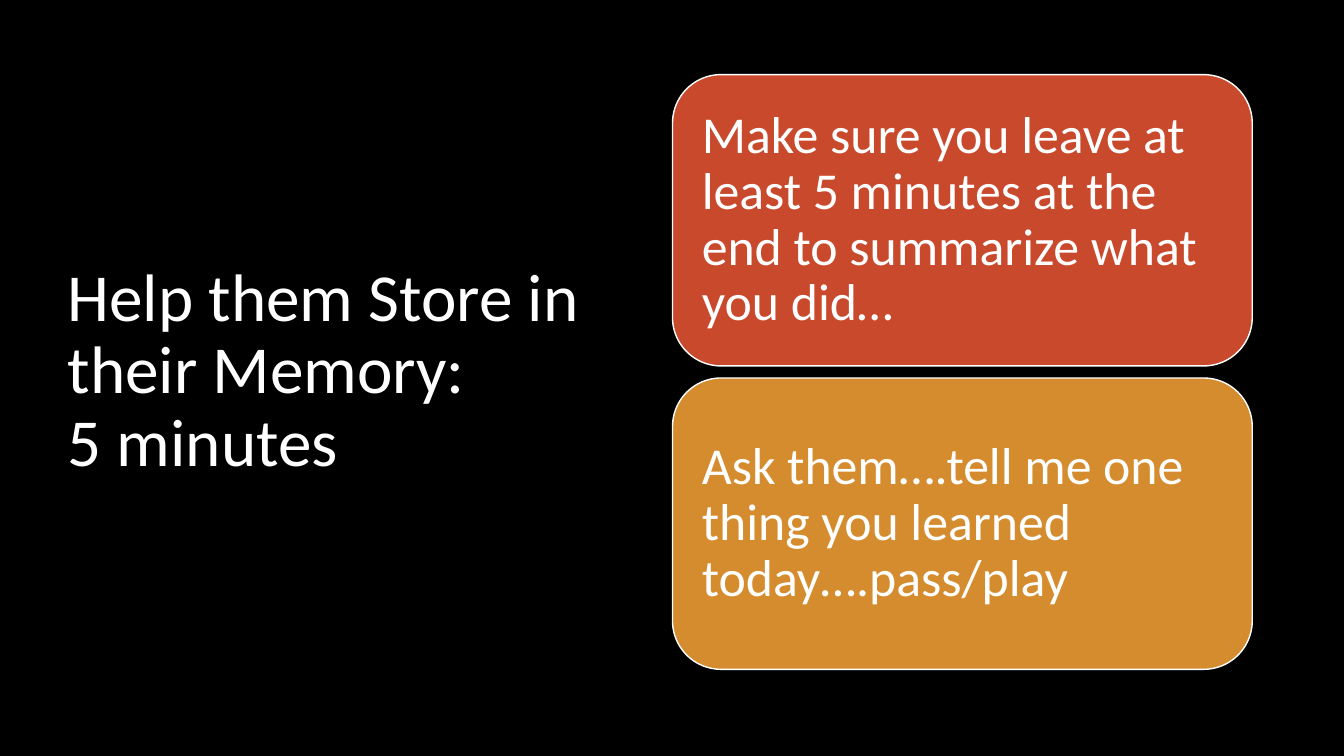
from dataclasses import dataclass

from pptx import Presentation
from pptx.dml.color import RGBColor
from pptx.enum.shapes import MSO_SHAPE
from pptx.enum.text import MSO_ANCHOR, MSO_AUTO_SIZE, PP_ALIGN
from pptx.slide import Slide
from pptx.text.text import TextFrame
from pptx.util import Inches, Pt

BLACK = RGBColor(0x00, 0x00, 0x00)
WHITE = RGBColor(0xFF, 0xFF, 0xFF)
RED = RGBColor(0xC9, 0x49, 0x2C)
AMBER = RGBColor(0xD5, 0x8C, 0x2E)

CARD_LEFT, CARD_TOP = 6.67, 0.74
CARD_WIDTH, CARD_HEIGHT = 5.75, 2.89
CARD_STEP = 3.01


@dataclass
class Card:
    text: str
    color: RGBColor


CARDS = [
    Card("Make sure you leave at least 5 minutes at the end to summarize what you did…", RED),
    Card("Ask them….tell me one thing you learned today….pass/play", AMBER),
]


def write_text(frame: TextFrame, text: str, size: float) -> None:
    frame.text = text
    frame.word_wrap = True
    frame.auto_size = MSO_AUTO_SIZE.NONE
    frame.vertical_anchor = MSO_ANCHOR.MIDDLE
    for para in frame.paragraphs:
        para.alignment = PP_ALIGN.LEFT
        para.line_spacing = 0.9
        for span in para.runs:
            span.font.name = "Calibri"
            span.font.size = Pt(size)
            span.font.color.rgb = WHITE


def add_title(page: Slide, text: str) -> None:
    title = page.shapes.title
    title.left, title.top = Inches(0.57), Inches(0.68)
    title.width, title.height = Inches(5.67), Inches(6.02)
    write_text(title.text_frame, text, 48)


def add_card(page: Slide, card: Card, top: float) -> None:
    box = page.shapes.add_shape(
        MSO_SHAPE.ROUNDED_RECTANGLE,
        Inches(CARD_LEFT), Inches(top), Inches(CARD_WIDTH), Inches(CARD_HEIGHT),
    )
    box.shadow.inherit = False
    box.fill.solid()
    box.fill.fore_color.rgb = card.color
    box.line.color.rgb = WHITE
    box.line.width = Pt(1)
    frame = box.text_frame
    frame.margin_left = frame.margin_right = Inches(0.15)
    frame.margin_top = frame.margin_bottom = Inches(0.15)
    write_text(frame, card.text, 37)


def main() -> None:
    deck = Presentation()
    deck.slide_width, deck.slide_height = Inches(13.33), Inches(7.5)
    page = deck.slides.add_slide(deck.slide_layouts.get_by_name("Title Only"))
    page.background.fill.solid()
    page.background.fill.fore_color.rgb = BLACK
    add_title(page, "Help them Store in their Memory:\v5 minutes")
    for index, card in enumerate(CARDS):
        add_card(page, card, CARD_TOP + index * CARD_STEP)
    deck.save("out.pptx")


if __name__ == "__main__":
    main()
